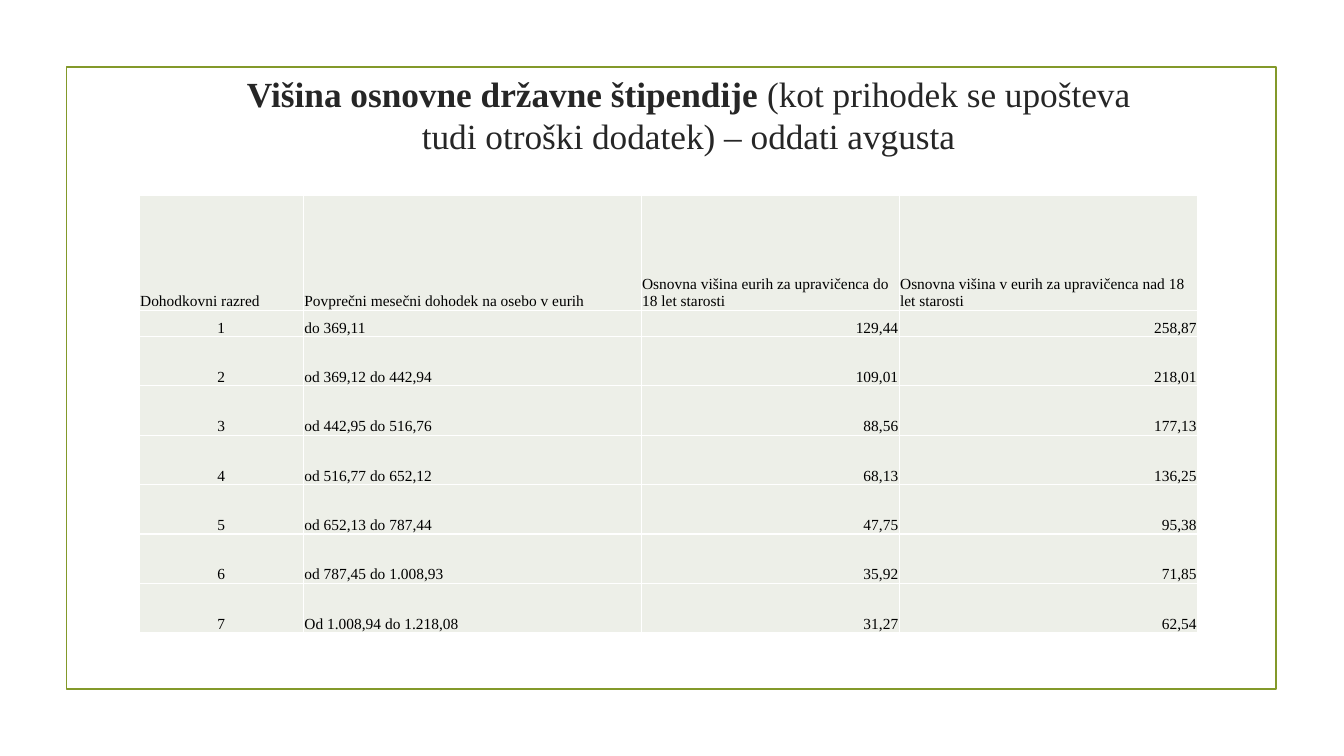
from dataclasses import dataclass

from pptx import Presentation
from pptx.dml.color import RGBColor
from pptx.enum.shapes import MSO_SHAPE as Shape
from pptx.enum.text import MSO_ANCHOR as Anchor, PP_ALIGN as Align
from pptx.oxml import parse_xml
from pptx.oxml.ns import nsdecls
from pptx.slide import Slide
from pptx.table import _Cell as Cell
from pptx.util import Pt

OLIVE = RGBColor(0x83, 0x99, 0x2A)
INK = RGBColor(0x26, 0x26, 0x26)
BLACK = RGBColor(0, 0, 0)
PALE = RGBColor(0xED, 0xEF, 0xE8)
WHITE = RGBColor(0xFF, 0xFF, 0xFF)
FACE = "Times New Roman"


@dataclass
class Column:
    head: str
    width: float
    align: Align
    items: list[str]


COLS = [
    Column("Dohodkovni razred", 117.36, Align.CENTER, [str(n) for n in range(1, 8)]),
    Column("Povprečni mesečni dohodek na osebo v eurih", 241.2, Align.LEFT,
           ["do 369,11", "od 369,12 do 442,94", "od 442,95 do 516,76",
            "od 516,77 do 652,12", "od 652,13 do 787,44",
            "od 787,45 do 1.008,93", "Od 1.008,94 do 1.218,08"]),
    Column("Osnovna višina eurih za upravičenca do 18 let starosti", 184.32, Align.RIGHT,
           ["129,44", "109,01", "88,56", "68,13", "47,75", "35,92", "31,27"]),
    Column("Osnovna višina v eurih za upravičenca nad 18 let starosti", 213.12, Align.RIGHT,
           ["258,87", "218,01", "177,13", "136,25", "95,38", "71,85", "62,54"]),
]
ROWS = [82, 18.72] + [35.28] * 6
TITLE = [("Višina osnovne državne štipendije ", True),
         ("(kot prihodek se upošteva tudi otroški dodatek) – oddati avgusta", False)]


def assign(target: object, values: dict) -> None:
    for name, value in values.items():
        setattr(target, name, value)


def style(font, size: float, color: RGBColor, bold: bool) -> None:
    assign(font, {"name": FACE, "size": Pt(size), "bold": bold})
    font.color.rgb = color


def add_frame(slide: Slide) -> None:
    frame = slide.shapes.add_shape(Shape.RECTANGLE, Pt(47.6), Pt(48), Pt(864), Pt(444))
    frame.shadow.inherit = False
    frame.fill.background()
    frame.line.color.rgb = OLIVE
    frame.line.width = Pt(1.25)


def add_title(slide: Slide) -> None:
    title = slide.shapes.title
    assign(title, {"left": Pt(168), "top": Pt(18), "width": Pt(648), "height": Pt(96)})
    assign(title.text_frame, {"word_wrap": True, "vertical_anchor": Anchor.MIDDLE,
                              "margin_top": Pt(36), "margin_bottom": Pt(4)})
    para = title.text_frame.paragraphs[0]
    assign(para, {"alignment": Align.CENTER, "line_spacing": Pt(30)})
    for text, bold in TITLE:
        run = para.add_run()
        run.text = text
        style(run.font, 25.2, INK, bold)


def add_edges(cell: Cell) -> None:
    """Give all four sides of the cell a thin white border."""
    props = cell._tc.get_or_add_tcPr()
    for side in ("lnL", "lnR", "lnT", "lnB"):
        props.append(parse_xml(
            f'<a:{side} {nsdecls("a")} w="{Pt(1)}"><a:solidFill>'
            f'<a:srgbClr val="{WHITE}"/></a:solidFill></a:{side}>'))


def fill_cell(cell: Cell, text: str, align: Align) -> None:
    add_edges(cell)
    cell.fill.solid()
    cell.fill.fore_color.rgb = PALE
    assign(cell, {"text": text, "vertical_anchor": Anchor.BOTTOM,
                  "margin_left": Pt(0.7), "margin_right": Pt(0.7),
                  "margin_top": Pt(0.7), "margin_bottom": Pt(0)})
    para = cell.text_frame.paragraphs[0]
    para.alignment = align
    style(para.runs[0].font, 11, BLACK, False)


def add_grid(slide: Slide) -> None:
    width = sum(col.width for col in COLS)
    grid = slide.shapes.add_table(len(ROWS), len(COLS), Pt(99.4), Pt(139.7),
                                  Pt(width), Pt(sum(ROWS))).table
    assign(grid, {"first_row": False, "horz_banding": False})
    for row, height in zip(grid.rows, ROWS):
        row.height = Pt(height)
    for c, col in enumerate(COLS):
        grid.columns[c].width = Pt(col.width)
        fill_cell(grid.cell(0, c), col.head, Align.LEFT)
        for r, item in enumerate(col.items, 1):
            fill_cell(grid.cell(r, c), item, col.align)


def main() -> None:
    deck = Presentation()
    assign(deck, {"slide_width": Pt(960), "slide_height": Pt(540)})
    slide = deck.slides.add_slide(deck.slide_layouts[5])
    add_frame(slide)
    add_title(slide)
    add_grid(slide)
    deck.save("out.pptx")


if __name__ == "__main__":
    main()
